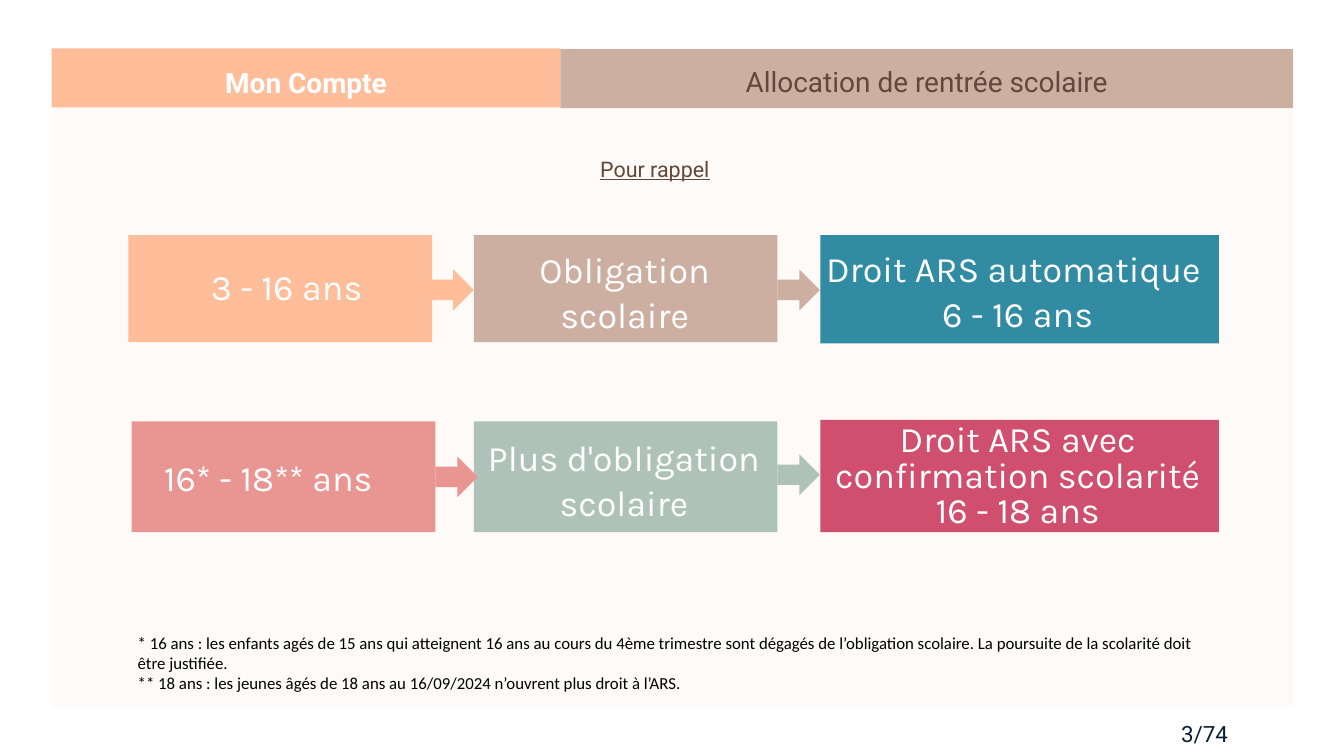
from dataclasses import dataclass

from pptx import Presentation
from pptx import util as u
from pptx.dml.color import RGBColor
from pptx.enum import shapes, text


@dataclass(frozen=True)
class Theme:
    peach: str = "FFBE99"
    taupe: str = "CDAFA2"
    cream: str = "FDFAF7"
    teal: str = "318BA2"
    coral: str = "E99692"
    sage: str = "AEC2BA"
    raspberry: str = "D14F6E"
    brown: str = "61483A"
    navy: str = "0A2032"
    white: str = "FFFFFF"
    black: str = "000000"
    sans: str = "Roboto"
    display: str = "Karla"
    note: str = "Calibri"
    header_size: float = 30
    subtitle_size: float = 23
    step_size: float = 38.4
    note_size: float = 18
    page_size: float = 24


class SlideBuilder:
    def __init__(self, slide, theme):
        self.s = slide
        self.theme = theme

    def block(self, box, color, kind=shapes.MSO_SHAPE.RECTANGLE):
        """Add a flat, borderless preset shape."""
        sp = self.s.shapes.add_shape(kind, *map(u.Inches, box))
        sp.shadow.inherit = False
        sp.fill.solid()
        sp.fill.fore_color.rgb = RGBColor.from_string(color)
        sp.line.fill.background()

    def arrow(self, left, top, color):
        self.block((left, top, 0.63, 0.61), color, shapes.MSO_SHAPE.RIGHT_ARROW)

    def label(self, box, lines, font, size, color, spacing=None, inset=0.0,
              align=text.PP_ALIGN.CENTER, anchor=text.MSO_ANCHOR.TOP,
              bold=False, underline=False):
        tf = self.s.shapes.add_textbox(*map(u.Inches, box)).text_frame
        tf.word_wrap = True
        tf.vertical_anchor = anchor
        tf.margin_left = tf.margin_right = u.Inches(inset)
        tf.margin_top = tf.margin_bottom = u.Inches(min(inset, 0.06))
        tf.text = "\n".join(lines)
        for p in tf.paragraphs:
            p.alignment = align
            if spacing:
                p.line_spacing = u.Pt(spacing)
            p.font.name = font
            p.font.size = u.Pt(size)
            p.font.bold = bold
            p.font.underline = underline
            p.font.color.rgb = RGBColor.from_string(color)

    def step(self, box, color, text_box, lines, spacing=48):
        """Add a coloured box of the flow with its caption."""
        self.block(box, color)
        self.label(text_box, lines, self.theme.display, self.theme.step_size,
                   self.theme.white, spacing)


def main():
    prs = Presentation()
    prs.slide_width, prs.slide_height = u.Inches(20), u.Inches(11.25)
    t = Theme()
    b = SlideBuilder(prs.slides.add_slide(prs.slide_layouts[6]), t)

    b.label((17.33, 10.65, 1.19, 0.44), ["3/74"], t.sans, t.page_size, t.navy, 33.6)

    b.block((0.77, 0.72, 18.47, 9.8), t.cream)
    b.block((0.77, 0.72, 7.57, 0.88), t.peach)
    b.block((8.34, 0.73, 10.9, 0.88), t.taupe)
    b.label((8.34, 0.72, 10.9, 0.89), ["Allocation de rentrée scolaire"],
            t.sans, t.header_size, t.brown, 42, inset=0.06,
            anchor=text.MSO_ANCHOR.MIDDLE)
    b.label((2.74, 0.89, 3.63, 0.54), ["Mon Compte"],
            t.sans, t.header_size, t.white, 42, bold=True)
    b.label((1.49, 2.26, 16.51, 0.42), ["Pour rappel"],
            t.sans, t.subtitle_size, t.brown, 32.2, underline=True)

    narrow, wide = 4.52, 5.93
    duty_left, right_left = 7.05, 12.21
    steps = [
        ((1.91, 3.5, narrow, 1.59), t.peach, (2.24, 3.91, 4.05, 0.64),
         ["3 - 16 ans"]),
        ((duty_left, 3.5, narrow, 1.59), t.taupe, (7.27, 3.66, 4.05, 1.3),
         ["Obligation scolaire"]),
        ((right_left, 3.5, wide, 1.61), t.teal, (12.18, 3.65, wide, 1.3),
         ["Droit ARS automatique ", "6 - 16 ans"]),
        ((1.96, 6.27, narrow, 1.65), t.coral, (2.03, 6.76, 4.05, 0.64),
         ["16* - 18** ans "]),
        ((duty_left, 6.27, narrow, 1.65), t.sage, (7.26, 6.46, 4.05, 1.29),
         ["Plus d'obligation", "scolaire"]),
        ((right_left, 6.25, wide, 1.67), t.raspberry, (12.18, 6.32, wide, 1.6),
         ["Droit ARS avec confirmation scolarité", "16 - 18 ans"], 38),
    ]
    for step in steps:
        b.step(*step)

    for left, top, color in [(6.42, 4.01, t.peach), (11.57, 4.01, t.taupe),
                             (6.48, 6.79, t.coral), (11.57, 6.76, t.sage)]:
        b.arrow(left, top, color)

    b.label((1.95, 9.35, 16.18, 1.01), [
        "* 16 ans : les enfants agés de 15 ans qui atteignent 16 ans au cours du "
        "4ème trimestre sont dégagés de l’obligation scolaire. La poursuite de la "
        "scolarité doit être justifiée.",
        "** 18 ans : les jeunes âgés de 18 ans au 16/09/2024 n’ouvrent plus droit "
        "à l’ARS.",
    ], t.note, t.note_size, t.black, inset=0.1, align=text.PP_ALIGN.LEFT)

    prs.save("out.pptx")


if __name__ == "__main__":
    main()
